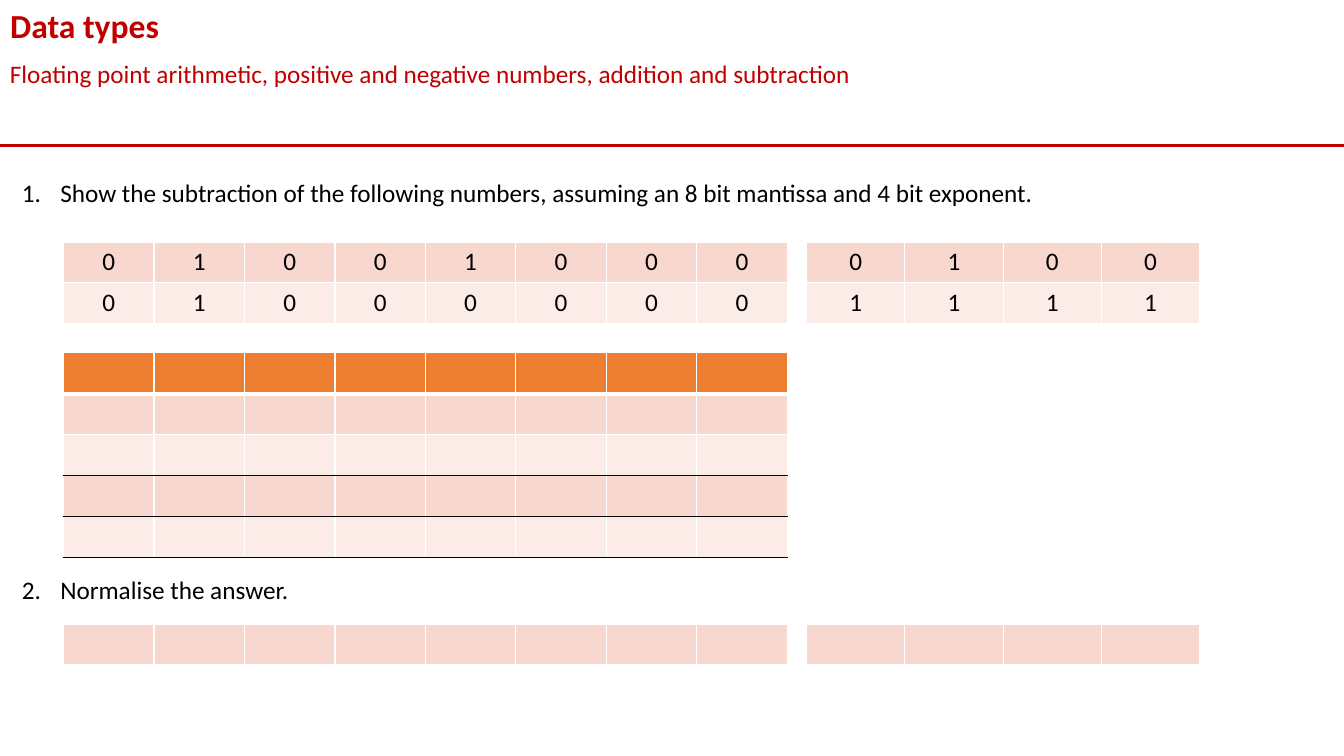
from dataclasses import dataclass

from lxml import etree
from pptx import Presentation
from pptx.dml.color import RGBColor
from pptx.enum.shapes import MSO_CONNECTOR
from pptx.enum.text import MSO_ANCHOR, PP_ALIGN
from pptx.oxml.ns import qn
from pptx.shapes.base import BaseShape
from pptx.slide import Slide
from pptx.table import _Cell
from pptx.text.text import _Paragraph
from pptx.util import Inches, Pt

STRAIGHT = MSO_CONNECTOR.STRAIGHT
TOP = MSO_ANCHOR.TOP
LEFT, CENTER = PP_ALIGN.LEFT, PP_ALIGN.CENTER


@dataclass(frozen=True)
class Theme:
    font: str = "Calibri"
    title_size: float = 24
    body_size: float = 18
    red: str = "C00000"
    black: str = "000000"
    white: str = "FFFFFF"
    orange: str = "ED7D31"
    pink: str = "F8D7CE"
    pale_pink: str = "FCECE8"


THEME = Theme()


@dataclass(frozen=True)
class Rule:
    color: str
    width: float


WHITE_RULE = Rule(THEME.white, 1)
HEADER_RULE = Rule(THEME.white, 3)
BLACK_RULE = Rule(THEME.black, 1)


@dataclass(frozen=True)
class Question:
    number: int
    text: str
    top: float


@dataclass(frozen=True)
class Columns:
    left: float
    width: float
    count: int


@dataclass(frozen=True)
class BitGrid:
    columns: Columns
    top: float
    rows: tuple[str, ...]
    fills: tuple[str, ...]
    rules: tuple[Rule, ...]


MANTISSA = Columns(0.63, 7.18, 8)
EXPONENT = Columns(8, 3.9, 4)
ROW_HEIGHT = 0.406
BANDS = (THEME.pink, THEME.pale_pink)

QUESTIONS = (
    Question(1, "Show the subtraction of the following numbers, assuming an 8 bit "
                "mantissa and 4 bit exponent.", 1.71),
    Question(2, "Normalise the answer.", 5.65),
)
GRIDS = (
    BitGrid(MANTISSA, 2.4, ("01001000", "01000000"), BANDS, (WHITE_RULE,) * 3),
    BitGrid(EXPONENT, 2.4, ("0100", "1111"), BANDS, (WHITE_RULE,) * 3),
    BitGrid(MANTISSA, 3.5, ("",) * 5, (THEME.orange, *BANDS, *BANDS),
            (WHITE_RULE, HEADER_RULE, WHITE_RULE, BLACK_RULE, BLACK_RULE, BLACK_RULE)),
    BitGrid(MANTISSA, 6.19, ("",), BANDS[:1], (WHITE_RULE,) * 2),
    BitGrid(EXPONENT, 6.19, ("",), BANDS[:1], (WHITE_RULE,) * 2),
)


def add_text(paragraph: _Paragraph, text: str, size: float, color: str,
             bold: bool = False) -> None:
    run = paragraph.add_run()
    run.text = text
    run.font.name = THEME.font
    run.font.size = Pt(size)
    run.font.bold = bold
    run.font.color.rgb = RGBColor.from_string(color)


def prepare_paragraph(shape: BaseShape) -> _Paragraph:
    frame = shape.text_frame
    frame.word_wrap = True
    frame.vertical_anchor = TOP
    paragraph = frame.paragraphs[0]
    paragraph.alignment = LEFT
    return paragraph


def add_text_box(slide: Slide, left: float, top: float, width: float) -> _Paragraph:
    box = slide.shapes.add_textbox(Inches(left), Inches(top), Inches(width), Inches(0.4))
    return prepare_paragraph(box)


def add_heading(slide: Slide) -> None:
    title = slide.shapes.title
    title.left, title.top = Inches(0), Inches(0)
    title.width, title.height = Inches(13.33), Inches(0.5)
    add_text(prepare_paragraph(title), "Data types", THEME.title_size, THEME.red, True)
    add_text(add_text_box(slide, 0, 0.53, 13.33),
             "Floating point arithmetic, positive and negative numbers, "
             "addition and subtraction", THEME.body_size, THEME.red)
    divider = slide.shapes.add_connector(
        STRAIGHT, Inches(0), Inches(1.44), Inches(13.33), Inches(1.44))
    divider.line.color.rgb = RGBColor.from_string(THEME.red)
    divider.line.width = Pt(2.25)
    etree.SubElement(divider._element.spPr, qn("a:effectLst"))


def add_question(slide: Slide, question: Question) -> None:
    paragraph = add_text_box(slide, 0.12, question.top, 12.63)
    properties = paragraph._p.get_or_add_pPr()
    indent = Inches(0.38)
    properties.set("marL", str(indent))
    properties.set("indent", str(-indent))
    etree.SubElement(properties, qn("a:buFont"), typeface="+mj-lt")
    etree.SubElement(properties, qn("a:buAutoNum"), type="arabicPeriod",
                     startAt=str(question.number))
    add_text(paragraph, question.text, THEME.body_size, THEME.black)


def set_borders(cell: _Cell, top: Rule, bottom: Rule) -> None:
    properties = cell._tc.get_or_add_tcPr()
    sides = (("a:lnL", WHITE_RULE), ("a:lnR", WHITE_RULE), ("a:lnT", top), ("a:lnB", bottom))
    for position, (tag, rule) in enumerate(sides):
        line = etree.Element(qn(tag), w=str(Pt(rule.width)))
        fill = etree.SubElement(line, qn("a:solidFill"))
        etree.SubElement(fill, qn("a:srgbClr"), val=rule.color)
        properties.insert(position, line)


def add_grid(slide: Slide, grid: BitGrid) -> None:
    columns, row_count = grid.columns, len(grid.rows)
    table = slide.shapes.add_table(
        row_count, columns.count, Inches(columns.left), Inches(grid.top),
        Inches(columns.width), Inches(ROW_HEIGHT * row_count)).table
    table.first_row = False
    table.horz_banding = False
    for row, (bits, fill) in enumerate(zip(grid.rows, grid.fills)):
        for column in range(columns.count):
            cell = table.cell(row, column)
            cell.fill.solid()
            cell.fill.fore_color.rgb = RGBColor.from_string(fill)
            set_borders(cell, grid.rules[row], grid.rules[row + 1])
            paragraph = cell.text_frame.paragraphs[0]
            paragraph.alignment = CENTER
            if bits:
                add_text(paragraph, bits[column], THEME.body_size, THEME.black)


def main() -> None:
    presentation = Presentation()
    presentation.slide_width = Inches(13.33)
    presentation.slide_height = Inches(7.5)
    slide = presentation.slides.add_slide(presentation.slide_layouts[5])
    add_heading(slide)
    for question in QUESTIONS:
        add_question(slide, question)
    for grid in GRIDS:
        add_grid(slide, grid)
    presentation.save("out.pptx")


if __name__ == "__main__":
    main()
